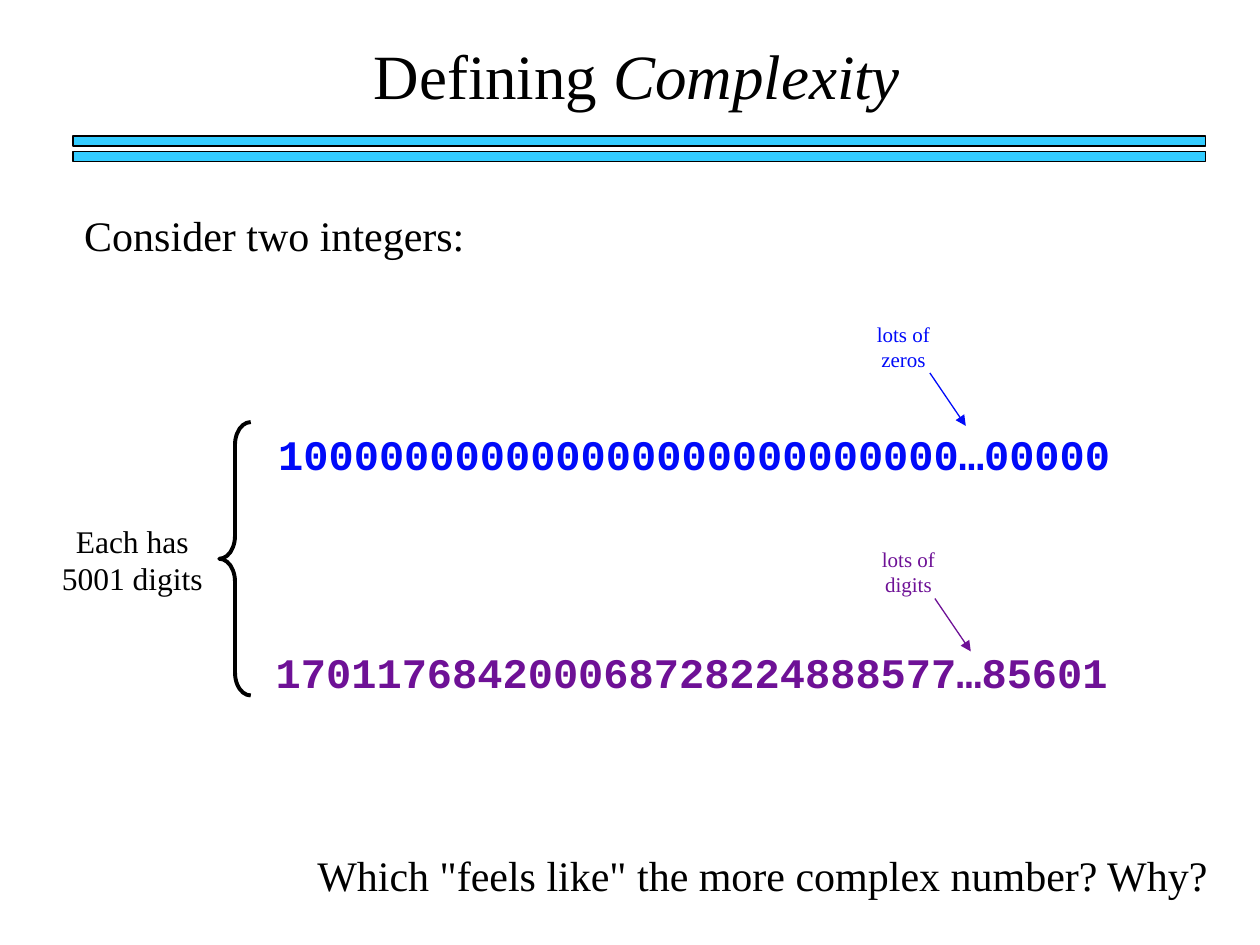
from dataclasses import dataclass

from lxml import etree
from pptx import Presentation
from pptx import util as u
from pptx.dml.color import RGBColor
from pptx.enum import shapes, text
from pptx.oxml.ns import qn

COLS, ROWS = 100, 75


@dataclass(frozen=True)
class Theme:
    serif: str = "Times New Roman"
    mono: str = "Courier New"
    black: str = "000000"
    bar: str = "33CCFF"
    simple: str = "000AF9"
    complex: str = "6E1196"
    title: int = 36
    body: int = 24
    label: int = 18
    note: int = 12
    thin: float = 0.75
    thick: float = 2.25


class SlideBuilder:
    """Draws on one slide; every length is in grid columns and rows."""

    def __init__(self, prs, theme):
        self.theme = theme
        self.cell_w = prs.slide_width / COLS
        self.cell_h = prs.slide_height / ROWS
        self.s = prs.slides.add_slide(prs.slide_layouts[5])

    def at(self, *lengths):
        """Turn alternating columns and rows into EMU."""
        return [u.Emu(round(n * (self.cell_h if i % 2 else self.cell_w)))
                for i, n in enumerate(lengths)]

    def style_text(self, p, size, color, font=None, bold=False, align=None):
        p.font.name = font or self.theme.serif
        p.font.size = u.Pt(size)
        p.font.bold = bold
        p.font.color.rgb = RGBColor.from_string(color)
        p.alignment = align

    def style_line(self, line, color, width):
        line.color.rgb = RGBColor.from_string(color)
        line.width = u.Pt(width)

    def title(self, box, plain, italic):
        sp = self.s.shapes.title
        sp.left, sp.top, sp.width, sp.height = self.at(*box)
        tf = sp.text_frame
        tf.auto_size = text.MSO_AUTO_SIZE.NONE
        tf.vertical_anchor = text.MSO_ANCHOR.MIDDLE
        p = tf.paragraphs[0]
        p.add_run().text = plain
        r = p.add_run()
        r.text = italic
        r.font.italic = True
        self.style_text(p, self.theme.title, self.theme.black,
                        align=text.PP_ALIGN.CENTER)

    def text(self, box, words, size, color, font=None, bold=False):
        """One unwrapped line."""
        tf = self.s.shapes.add_textbox(*self.at(*box)).text_frame
        tf.word_wrap = False
        tf.text = words
        self.style_text(tf.paragraphs[0], size, color, font, bold)

    def label(self, box, words, size, color):
        """Centred text that wraps within its box."""
        tf = self.s.shapes.add_textbox(*self.at(*box)).text_frame
        tf.word_wrap = True
        tf.text = words
        self.style_text(tf.paragraphs[0], size, color,
                        align=text.PP_ALIGN.CENTER)

    def bar(self, box):
        sp = self.s.shapes.add_shape(shapes.MSO_SHAPE.RECTANGLE, *self.at(*box))
        sp.shadow.inherit = False
        sp.fill.solid()
        sp.fill.fore_color.rgb = RGBColor.from_string(self.theme.bar)
        self.style_line(sp.line, self.theme.black, self.theme.thin)

    def brace(self, box):
        sp = self.s.shapes.add_shape(shapes.MSO_SHAPE.LEFT_BRACE, *self.at(*box))
        sp.shadow.inherit = False
        sp.adjustments[0] = 0.72
        sp.fill.background()
        self.style_line(sp.line, self.theme.black, self.theme.thick)

    def arrow(self, start, end, color):
        sp = self.s.shapes.add_connector(shapes.MSO_CONNECTOR.STRAIGHT,
                                         *self.at(*start, *end))
        self.style_line(sp.line, color, self.theme.thin)
        etree.SubElement(sp.line._get_or_add_ln(), qn("a:tailEnd"), type="triangle")
        etree.SubElement(sp._element.spPr, qn("a:effectLst"))

    def integer(self, left, top, digits, note, note_left, note_top, color):
        """A long number with a note and an arrow to its ellipsis."""
        self.text((left, top, 68, 5), digits, self.theme.body, color,
                  self.theme.mono, bold=True)
        self.label((note_left, note_top, 9.2, 5), note, self.theme.note, color)
        x, y = note_left + 6.7, note_top + 4.6
        self.arrow((x, y), (x + 2.85, y + 4.2), color)


def main():
    prs = Presentation()
    prs.slide_width, prs.slide_height = u.Inches(10), u.Inches(7.5)
    theme = Theme()
    b = SlideBuilder(prs, theme)

    b.title((10.2, 2.4, 80.7, 7), "Defining ", "Complexity")
    for top in (10.8, 12):
        b.bar((5.8, top, 89.9, 0.8))

    b.text((5.7, 16.1, 32.2, 5), "Consider two integers:",
           theme.body, theme.black)
    b.integer(21.1, 33.5, "100000000000000000000000000…00000",
              "lots of zeros", 67.1, 25, theme.simple)
    b.integer(20.9, 50.8, "170117684200068728224888577…85601",
              "lots of digits", 67.5, 42.9, theme.complex)
    b.brace((17.4, 33.5, 2.5, 21.7))
    b.label((3.6, 40.9, 13.8, 7), "Each has 5001 digits",
            theme.label, theme.black)
    b.text((24.2, 66.9, 72.8, 5),
           'Which "feels like" the more complex number? Why?',
           theme.body, theme.black)

    prs.save("out.pptx")


if __name__ == "__main__":
    main()
